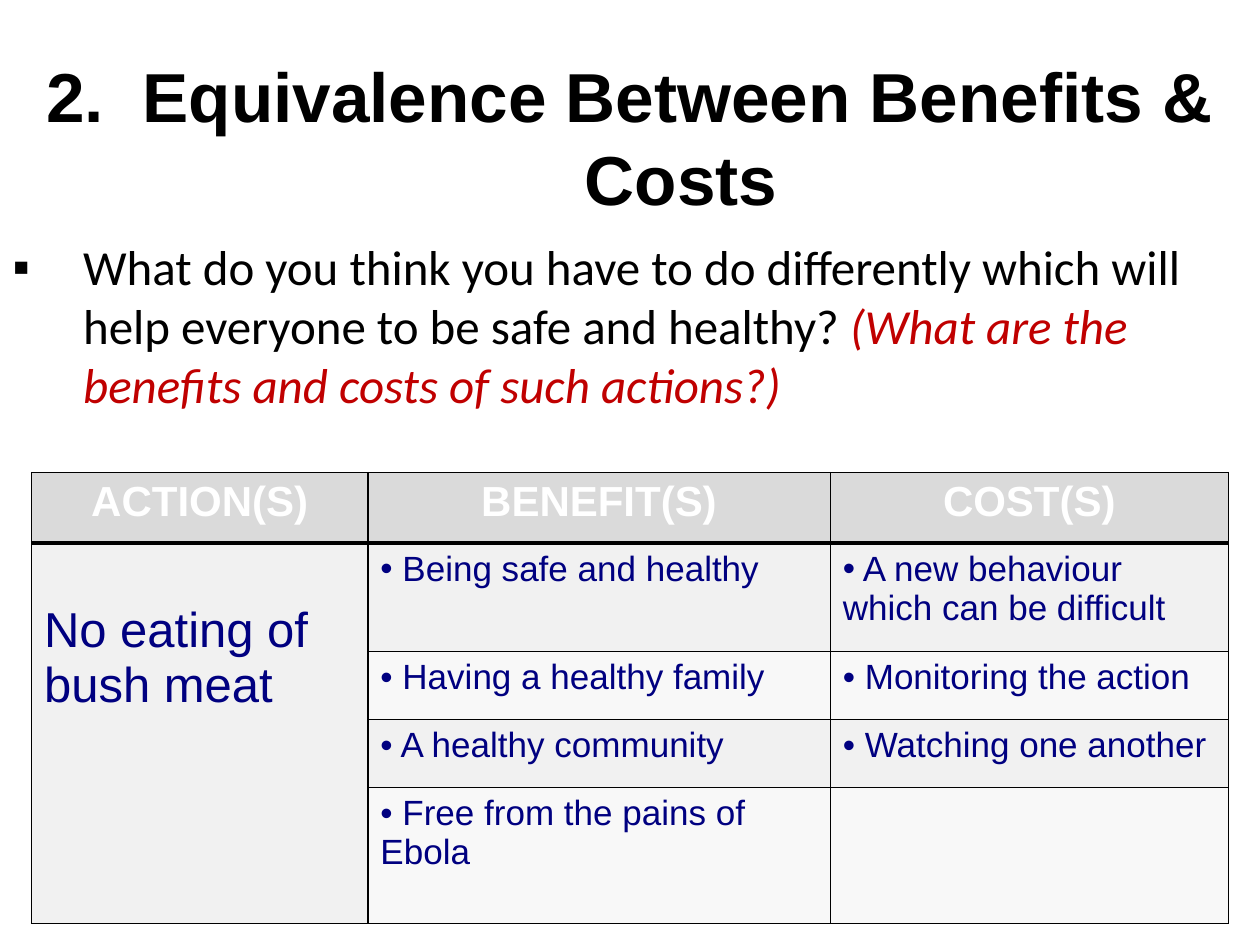
from lxml.etree import SubElement
from pptx import Presentation
from pptx.dml.color import RGBColor
from pptx.enum.text import MSO_ANCHOR as Anchor, MSO_AUTO_SIZE as AutoSize, PP_ALIGN as Align
from pptx.oxml import parse_xml
from pptx.oxml.ns import nsdecls, qn
from pptx.util import Inches, Pt

BLACK, WHITE, RED, NAVY = "000000", "FFFFFF", "C00000", "000080"
HEADER_FILL, BAND_FILLS = "DADADA", ("F1F1F1", "F8F8F8")

COLUMN_WIDTHS = (2.67, 3.67, 3.16)
ROW_HEIGHTS = (0.56, 0.86, 0.54, 0.54, 1.08)
HEADINGS = ("ACTION(S)", "BENEFIT(S)", "COST(S)")
ACTION = "No eating of bush meat"
BENEFITS_AND_COSTS = (
    ("Being safe and healthy", "A new behaviour which can be difficult"),
    ("Having a healthy family", "Monitoring the action"),
    ("A healthy community", "Watching one another"),
    ("Free from the pains of Ebola", ""),
)


def color(hex_value):
    return RGBColor.from_string(hex_value)


def add_run(paragraph, text, size, hex_value, face="Arial", bold=False, italic=False):
    run = paragraph.add_run()
    run.text = text
    font = run.font
    font.name, font.size, font.bold, font.italic = face, Pt(size), bold, italic
    font.color.rgb = color(hex_value)


def set_indent(paragraph, hanging):
    properties = paragraph._p.get_or_add_pPr()
    properties.set("marL", str(Inches(hanging)))
    properties.set("indent", str(-Inches(hanging)))
    return properties


def set_bullet(paragraph, char, hanging=0):
    properties = set_indent(paragraph, hanging)
    SubElement(properties, qn("a:buFont")).set("typeface", "Arial")
    SubElement(properties, qn("a:buChar")).set("char", char)


def place(shape, left, top, width, height):
    shape.left, shape.top = Inches(left), Inches(top)
    shape.width, shape.height = Inches(width), Inches(height)


def style_cell(cell, fill, top=1, bottom=1):
    cell.fill.solid()
    cell.fill.fore_color.rgb = color(fill)
    properties = cell._tc.get_or_add_tcPr()
    edges = (("lnL", 1), ("lnR", 1), ("lnT", top), ("lnB", bottom))
    for position, (edge, width) in enumerate(edges):
        properties.insert(position, parse_xml(
            f'<a:{edge} {nsdecls("a")} w="{Pt(width)}"><a:solidFill>'
            f'<a:srgbClr val="{BLACK}"/></a:solidFill></a:{edge}>'))


def fill_title(title, box):
    place(title, *box)
    frame = title.text_frame
    frame.auto_size = AutoSize.NONE
    frame.vertical_anchor = Anchor.MIDDLE
    heading = frame.paragraphs[0]
    heading.alignment = Align.CENTER
    set_indent(heading, 0.81)
    add_run(heading, "2.  Equivalence Between Benefits & Costs", 39.6, BLACK, bold=True)


def fill_question(body, box):
    place(body, *box)
    frame = body.text_frame
    frame.auto_size = AutoSize.NONE
    question = frame.paragraphs[0]
    set_bullet(question, "▪", 0.56)
    add_run(question, "What do you think you have to do differently which will "
            "help everyone to be safe and healthy? ", 28, BLACK, "Calibri")
    add_run(question, "(What are the benefits and costs of such actions?)",
            28, RED, "Calibri", italic=True)


def add_actions_table(slide, box):
    table = slide.shapes.add_table(len(ROW_HEIGHTS), len(COLUMN_WIDTHS),
                                   *map(Inches, box)).table
    for column, width in zip(table.columns, COLUMN_WIDTHS):
        column.width = Inches(width)
    for row, height in zip(table.rows, ROW_HEIGHTS):
        row.height = Inches(height)

    # Header row
    for col, heading in enumerate(HEADINGS):
        cell = table.cell(0, col)
        style_cell(cell, HEADER_FILL, bottom=3)
        paragraph = cell.text_frame.paragraphs[0]
        paragraph.alignment = Align.CENTER
        add_run(paragraph, heading, 24, WHITE, bold=True)

    # Benefits and costs, banded
    for row, entries in enumerate(BENEFITS_AND_COSTS, start=1):
        top = 3 if row == 1 else 1
        style_cell(table.cell(row, 0), BAND_FILLS[0], top)
        for col, entry in enumerate(entries, start=1):
            cell = table.cell(row, col)
            style_cell(cell, BAND_FILLS[(row - 1) % 2], top)
            if entry:
                paragraph = cell.text_frame.paragraphs[0]
                set_bullet(paragraph, "•")
                add_run(paragraph, " " + entry, 20, NAVY)

    # Action spanning all its benefits and costs
    action = table.cell(1, 0)
    action.merge(table.cell(len(BENEFITS_AND_COSTS), 0))
    action.margin_top = Inches(0.48)
    add_run(action.text_frame.paragraphs[0], ACTION, 28, NAVY)


def main():
    prs = Presentation()
    prs.slide_width, prs.slide_height = Inches(10), Inches(7.5)
    slide = prs.slides.add_slide(prs.slide_layouts[1])
    fill_title(slide.shapes.title, (0, 0.58, 10, 1))
    fill_question(slide.placeholders[1], (0, 1.83, 10, 5.67))
    add_actions_table(slide, (0.25, 3.75, 9.5, 3.58))
    prs.save("out.pptx")


if __name__ == "__main__":
    main()
